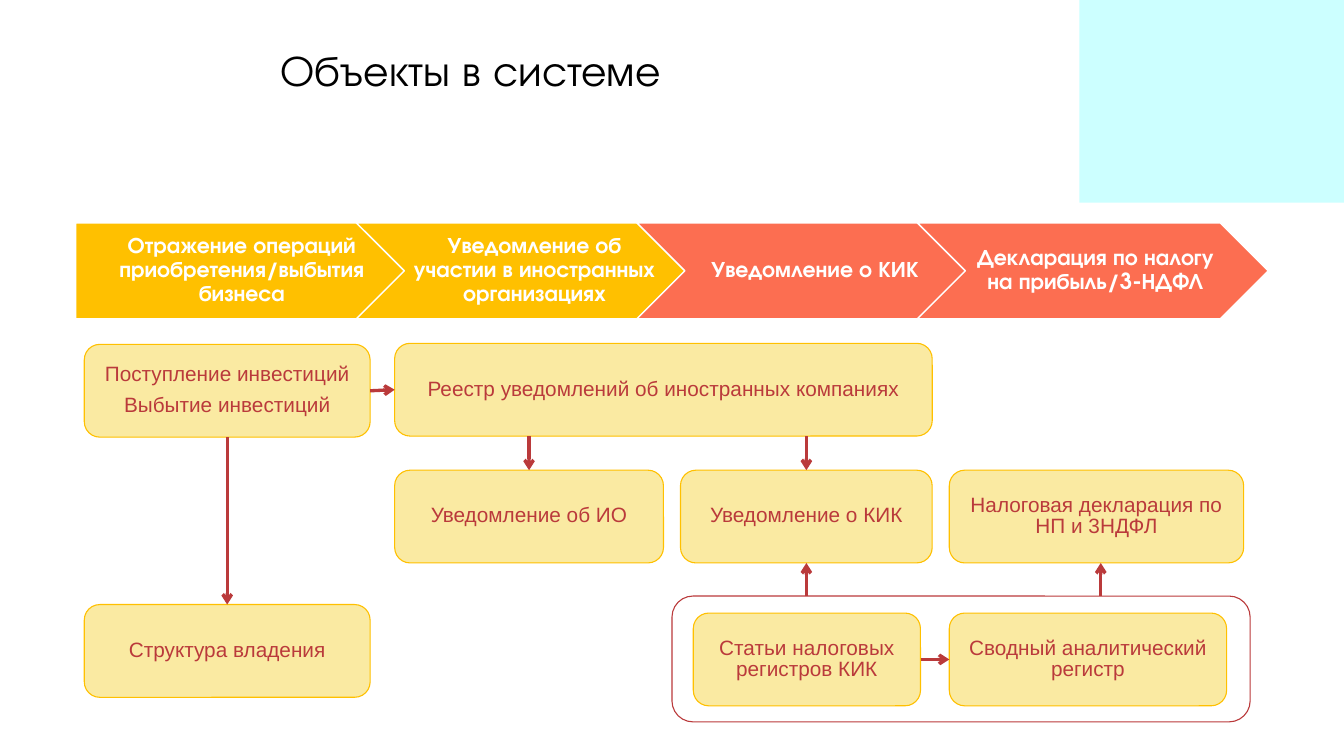
from lxml.etree import SubElement
from pptx import Presentation
from pptx.dml.color import RGBColor
from pptx.enum.shapes import MSO_CONNECTOR, MSO_SHAPE
from pptx.enum.text import MSO_ANCHOR, PP_ALIGN
from pptx.oxml.ns import qn
from pptx.util import Pt

PX = 9144
BLACK = RGBColor(0x00, 0x00, 0x00)
WHITE = RGBColor(0xFF, 0xFF, 0xFF)
CYAN = RGBColor(0xCC, 0xFF, 0xFF)
AMBER = RGBColor(0xFF, 0xC0, 0x00)
CORAL = RGBColor(0xFC, 0x6E, 0x51)
CREAM = RGBColor(0xF9, 0xE3, 0x83)
RED = RGBColor(0xBA, 0x3A, 0x3B)
HEAD_FONT = "TeX Gyre Adventor"

prs = Presentation()
prs.slide_width, prs.slide_height = 1260 * PX, 709 * PX
s = prs.slides.add_slide(prs.slide_layouts[5])


def add_box(kind, box, fill, line, width):
    sp = s.shapes.add_shape(kind, *(v * PX for v in box))
    sp.shadow.inherit = False
    if fill is None:
        sp.fill.background()
    else:
        sp.fill.solid()
        sp.fill.fore_color.rgb = fill
    if line is None:
        sp.line.fill.background()
    else:
        sp.line.color.rgb = line
        sp.line.width = Pt(width)
    return sp


def write(sp, lines, font, size, color, bold, spacing, align=PP_ALIGN.CENTER):
    tf = sp.text_frame
    tf.word_wrap = True
    tf.vertical_anchor = MSO_ANCHOR.MIDDLE
    tf.text = "\n".join(lines)
    for i, p in enumerate(tf.paragraphs):
        p.alignment = align
        p.line_spacing = spacing
        p.space_before = Pt(7 if i else 0)
        p.font.name = font
        p.font.size = Pt(size)
        p.font.bold = bold
        p.font.color.rgb = color


add_box(MSO_SHAPE.RECTANGLE, (1012, 0, 248, 190), CYAN, None, 0)

title = s.shapes.title
title.left, title.top, title.width, title.height = (v * PX for v in (253, 12, 973, 112))
write(title, ["Объекты в системе"], HEAD_FONT, 29, BLACK, False, 0.9, PP_ALIGN.LEFT)

stages = [
    ("Отражение операций приобретения/выбытия бизнеса", MSO_SHAPE.PENTAGON, AMBER),
    ("Уведомление об участии в иностранных организациях", MSO_SHAPE.CHEVRON, AMBER),
    ("Уведомление о КИК", MSO_SHAPE.CHEVRON, CORAL),
    ("Декларация по налогу на прибыль/3-НДФЛ", MSO_SHAPE.CHEVRON, CORAL),
]
for i, (text, kind, fill) in enumerate(stages):
    sp = add_box(kind, (71 + 263 * i, 209, 329, 90), fill, WHITE, 1)
    write(sp, [text], HEAD_FONT, 15, WHITE, True, 0.9)
    tf = sp.text_frame
    tf.margin_left, tf.margin_right = 7 * PX, 2 * PX
    tf.margin_top = tf.margin_bottom = 4 * PX

add_box(MSO_SHAPE.ROUNDED_RECTANGLE, (630, 559, 542, 118), None, RED, 0.75)

objects = [
    ("deals", 79, 323, 268, ["Поступление инвестиций", "Выбытие инвестиций"]),
    ("ownership", 79, 567, 268, ["Структура владения"]),
    ("registry", 370, 322, 504, ["Реестр уведомлений об иностранных компаниях"]),
    ("notice_io", 370, 441, 252, ["Уведомление об ИО"]),
    ("notice_kik", 638, 441, 236, ["Уведомление о КИК"]),
    ("declaration", 890, 441, 276, ["Налоговая декларация по НП и 3НДФЛ"]),
    ("items", 650, 575, 213, ["Статьи налоговых регистров КИК"]),
    ("summary", 890, 575, 260, ["Сводный аналитический регистр"]),
]
boxes = {}
for key, x, y, w, lines in objects:
    sp = add_box(MSO_SHAPE.ROUNDED_RECTANGLE, (x, y, w, 87), CREAM, AMBER, 0.75)
    color = sp.fill._xPr.find(qn("a:solidFill"))[0]
    SubElement(color, qn("a:alpha"), val="75000")
    write(sp, lines, "Arial", 14, RED, False, 0.85)
    boxes[key] = sp

arrows = [
    ((213, 410, 213, 567), ("deals", 2), ("ownership", 0)),
    ((347, 366, 370, 366), ("deals", 3), ("registry", 1)),
    ((496, 409, 496, 441), None, ("notice_io", 0)),
    ((756, 409, 756, 441), None, ("notice_kik", 0)),
    ((756, 559, 756, 528), None, ("notice_kik", 2)),
    ((1032, 559, 1032, 528), None, None),
    ((863, 618, 890, 618), ("items", 3), ("summary", 1)),
]
for ends, start, end in arrows:
    cx = s.shapes.add_connector(MSO_CONNECTOR.STRAIGHT, *(v * PX for v in ends))
    if start:
        cx.begin_connect(boxes[start[0]], start[1])
    if end:
        cx.end_connect(boxes[end[0]], end[1])
    cx.line.color.rgb = RED
    cx.line.width = Pt(2.25)
    SubElement(cx.line._get_or_add_ln(), qn("a:tailEnd"), type="arrow")
    SubElement(cx._element.spPr, qn("a:effectLst"))

prs.save("out.pptx")
